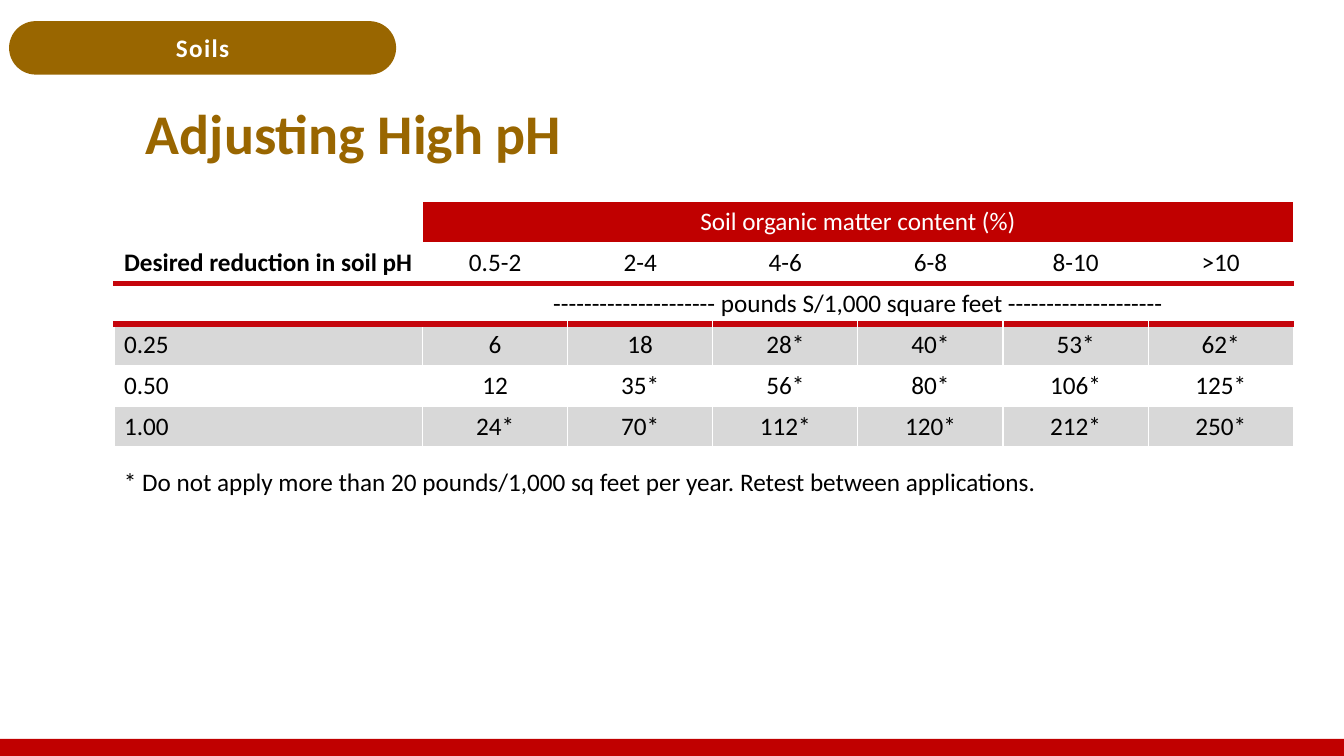
from pptx import Presentation
from pptx import util as u
from pptx.dml import color
from pptx.enum import shapes, text
from pptx.oxml import parse_xml
from pptx.oxml.ns import nsdecls

Pt = u.Pt
RED, LINE, BROWN = "C00000", "C5050C", "996600"
WHITE, BLACK, GREY = "FFFFFF", "000000", "D8D8D8"
LEFT, MID = text.PP_ALIGN.LEFT, text.PP_ALIGN.CENTER
ROWS = [
    ["", "Soil organic matter content (%)"],
    ["Desired reduction in soil pH", "0.5-2", "2-4", "4-6", "6-8", "8-10", ">10"],
    ["", "--------------------- pounds S/1,000 square feet --------------------"],
    ["0.25", "6", "18", "28*", "40*", "53*", "62*"],
    ["0.50", "12", "35*", "56*", "80*", "106*", "125*"],
    ["1.00", "24*", "70*", "112*", "120*", "212*", "250*"],
]


def rgb(code):
    """Turn a hex string into a colour."""
    return color.RGBColor.from_string(code)


def write(frame, words, size=18, hue=BLACK, bold=False, align=LEFT):
    """Put one run of text in a frame and return the run."""
    par = frame.paragraphs[0]
    par.alignment = align
    run = par.add_run()
    run.text = words
    font = run.font
    font.name, font.size, font.bold = "Calibri", Pt(size), bold
    font.color.rgb = rgb(hue)
    return run


def block(slide, kind, box, hue):
    """Draw a plain filled shape without an outline."""
    shape = slide.shapes.add_shape(kind, *map(Pt, box))
    shape.shadow.inherit = False
    shape.fill.solid()
    shape.fill.fore_color.rgb = rgb(hue)
    shape.line.fill.background()
    return shape


def label(slide, box, words, **look):
    """Add a wrapping text box with one line of text."""
    frame = slide.shapes.add_textbox(*map(Pt, box)).text_frame
    frame.word_wrap = True
    write(frame, words, **look)
    return frame


def badge(slide, box, words):
    """Draw the rounded topic badge."""
    pill = block(slide, shapes.MSO_SHAPE.ROUNDED_RECTANGLE, box, BROWN)
    pill.adjustments[0] = 0.5
    frame = pill.text_frame
    frame.vertical_anchor = text.MSO_ANCHOR.MIDDLE
    run = write(frame, words, hue=WHITE, bold=True, align=MID)
    run.font._element.set("spc", "100")


def title(slide, box, words):
    """Place the slide title."""
    frame = label(slide, box, words, size=40, hue=BROWN, bold=True)
    frame.vertical_anchor = text.MSO_ANCHOR.MIDDLE
    frame.paragraphs[0].line_spacing = 0.9


def edge(cell, side, hue, width):
    """Set the border on one side of a cell."""
    cell._tc.get_or_add_tcPr().append(parse_xml(
        f'<a:ln{side} {nsdecls("a")} w="{Pt(width)}"><a:solidFill>'
        f'<a:srgbClr val="{hue}"/></a:solidFill></a:ln{side}>'))


def rates(slide, box):
    """Build the table of sulfur rates."""
    count = len(ROWS[1])
    table = slide.shapes.add_table(len(ROWS), count, *map(Pt, box)).table
    table.first_row = table.horz_banding = False
    first = 220.4
    for c, col in enumerate(table.columns):
        col.width = Pt((box[2] - first) / (count - 1) if c else first)
    for r, row in enumerate(ROWS):
        table.rows[r].height = Pt(box[3] / len(ROWS))
        for c in range(count):
            cell = table.cell(r, c)
            for side in "LR":
                edge(cell, side, WHITE, 1)
            for side, rule in (("T", r in (2, 3)), ("B", r in (1, 2))):
                edge(cell, side, *((LINE, 4.5) if rule else (WHITE, 1)))
            head = r == 0 and c > 0
            cell.fill.solid()
            cell.fill.fore_color.rgb = rgb(
                RED if head else GREY if r in (3, 5) else WHITE)
            if c < len(row) and row[c]:
                write(cell.text_frame, row[c], hue=WHITE if head else BLACK,
                      bold=r == 1 and c == 0, align=MID if c else LEFT)
        if len(row) < count:
            table.cell(r, 1).merge(table.cell(r, count - 1))


def main():
    """Make the slide and save it."""
    deck = Presentation()
    deck.slide_width, deck.slide_height = Pt(960), Pt(540)
    slide = deck.slides.add_slide(deck.slide_layouts[6])
    block(slide, shapes.MSO_SHAPE.RECTANGLE, (0, 527.8, 960, 12.2), RED)
    badge(slide, (6.5, 15.1, 276.5, 38.2), "Soils")
    title(slide, (97.2, 61.2, 784, 72), "Adjusting High pH")
    rates(slide, (81.4, 144, 842.4, 175.2))
    label(slide, (81.4, 329.8, 691.2, 29),
          "* Do not apply more than 20 pounds/1,000 sq feet per year. "
          "Retest between applications.")
    deck.save("out.pptx")


if __name__ == "__main__":
    main()
